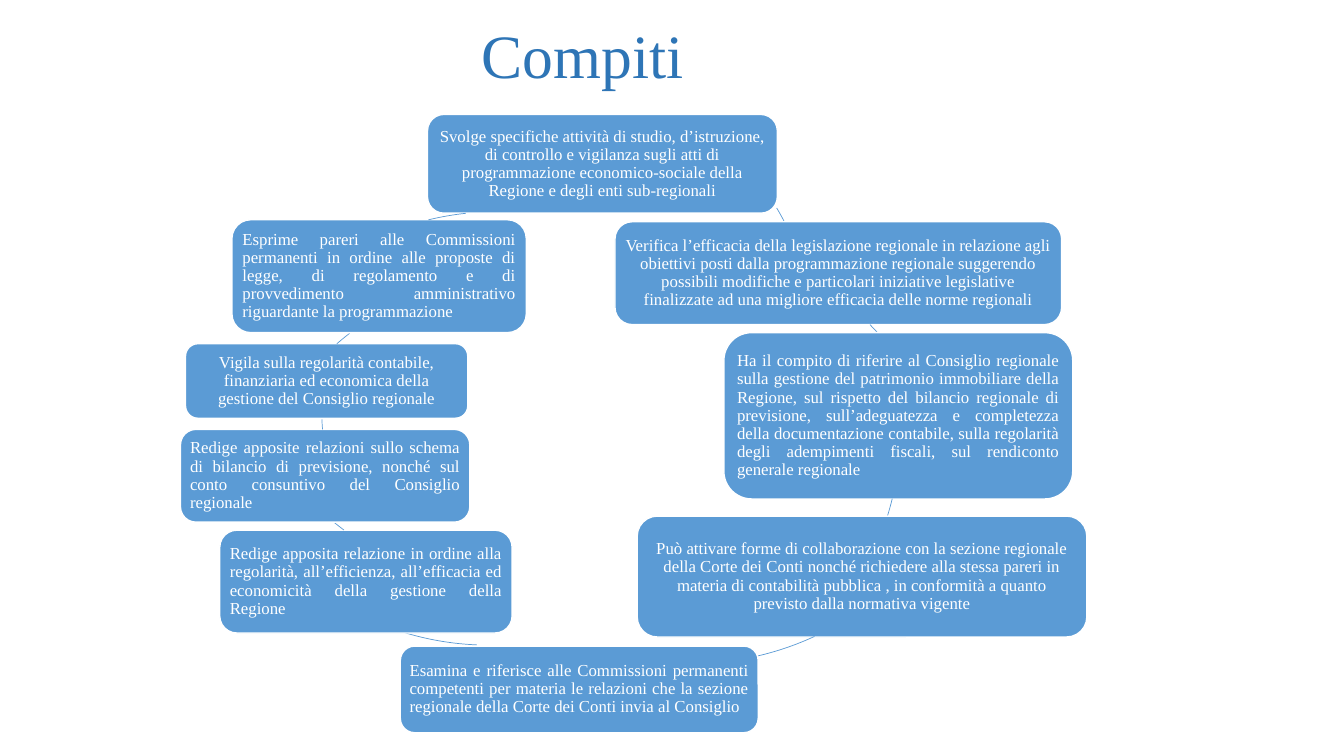
import math
from dataclasses import dataclass
from typing import Any

import pptx
import pptx.dml.color
import pptx.enum.shapes
import pptx.enum.text
import pptx.util

Inches = pptx.util.Inches
Pt = pptx.util.Pt
Color = pptx.dml.color.RGBColor
Align = pptx.enum.text.PP_ALIGN
Anchor = pptx.enum.text.MSO_ANCHOR
Fit = pptx.enum.text.MSO_AUTO_SIZE
Kind = pptx.enum.shapes.MSO_SHAPE


@dataclass(frozen=True)
class Theme:
    font: str = "Times New Roman"
    blue: Color = Color(0x5B, 0x9B, 0xD5)
    deep: Color = Color(0x2E, 0x75, 0xB6)
    white: Color = Color(0xFF, 0xFF, 0xFF)
    head: Pt = Pt(44)
    body: Pt = Pt(12)
    edge: Pt = Pt(1)
    thin: Pt = Pt(0.5)


@dataclass(frozen=True)
class Task:
    """A rounded box: left, top, width and height in inches."""
    place: tuple[float, float, float, float]
    text: str
    align: Align = Align.CENTER


@dataclass(frozen=True)
class Arc:
    """Part of a circle: its left and top, then two points, clockwise, in inches."""
    corner: tuple[float, float]
    start: tuple[float, float]
    end: tuple[float, float]


THEME = Theme()
SPAN = 5.71
PAD = Inches(0.05)

TASKS = [
    Task((4.24, 1.135, 3.47, 0.98),
         "Svolge specifiche attività di studio, d’istruzione, di controllo e vigilanza sugli atti di "
         "programmazione economico-sociale della Regione e degli enti sub-regionali"),
    Task((6.1, 2.2, 4.43, 1.02),
         "Verifica l’efficacia della legislazione regionale in relazione agli obiettivi posti dalla "
         "programmazione regionale suggerendo possibili modifiche e particolari iniziative legislative "
         "finalizzate ad una migliore efficacia delle norme regionali"),
    Task((7.18, 3.3, 3.46, 1.65),
         "Ha il compito di riferire al Consiglio regionale sulla gestione del patrimonio immobiliare "
         "della Regione, sul rispetto del bilancio regionale di previsione, sull’adeguatezza e "
         "completezza della documentazione contabile, sulla regolarità degli adempimenti fiscali, "
         "sul rendiconto generale regionale", Align.JUSTIFY),
    Task((6.32, 5.12, 4.46, 1.2),
         "Può attivare forme di collaborazione con la sezione regionale della Corte dei Conti nonché "
         "richiedere alla stessa pareri in materia di contabilità pubblica , in conformità a quanto "
         "previsto dalla normativa vigente"),
    Task((3.97, 6.41, 3.55, 0.86),
         "Esamina e riferisce alle Commissioni permanenti competenti per materia le relazioni che la "
         "sezione regionale della Corte dei Conti invia al Consiglio", Align.JUSTIFY),
    Task((2.18, 5.26, 2.9, 1.02),
         "Redige apposita relazione in ordine alla regolarità, all’efficienza, all’efficacia ed "
         "economicità della gestione della Regione", Align.JUSTIFY),
    Task((1.79, 4.26, 2.87, 0.92),
         "Redige apposite relazioni sullo schema di bilancio di previsione, nonché sul conto "
         "consuntivo del Consiglio regionale", Align.JUSTIFY),
    Task((1.84, 3.41, 2.8, 0.74),
         "Vigila sulla regolarità contabile, finanziaria ed economica della gestione del Consiglio "
         "regionale"),
    Task((2.3, 2.18, 2.92, 1.12),
         "Esprime pareri alle Commissioni permanenti in ordine alle proposte di legge, di regolamento "
         "e di provvedimento amministrativo riguardante la programmazione", Align.JUSTIFY),
]

ARCS = [
    Arc((2.39, 0.66), (7.71, 2.06), (7.79, 2.2)),
    Arc((3.74, 2.37), (8.63, 3.22), (8.7, 3.3)),
    Arc((3.22, 1.42), (8.86, 4.95), (8.81, 5.12)),
    Arc((4.02, 0.87), (8.08, 6.32), (7.52, 6.51)),
    Arc((1.99, 0.69), (4.73, 6.41), (3.99, 6.28)),
    Arc((2.27, 0.12), (3.41, 5.26), (3.32, 5.18)),
    Arc((3.19, 1.18), (3.2, 4.26), (3.2, 4.16)),
    Arc((2.36, 2.71), (3.34, 3.41), (3.47, 3.31)),
    Arc((2.07, 2.1), (4.25, 2.18), (4.62, 2.12)),
]


def apply(item: Any, form: dict[str, Any]) -> None:
    for name, value in form.items():
        setattr(item, name, value)


def write(shape: Any, text: str, frame: dict[str, Any], align: Align,
          size: Pt, color: Color) -> None:
    box = shape.text_frame
    box.text = text
    apply(box, {"word_wrap": True, "auto_size": Fit.NONE,
                "vertical_anchor": Anchor.MIDDLE, **frame})
    para = box.paragraphs[0]
    apply(para, {"alignment": align, "line_spacing": 0.9})
    font = para.runs[0].font
    apply(font, {"name": THEME.font, "size": size})
    font.color.rgb = color


def stroke(shape: Any, color: Color, width: Pt) -> None:
    shape.shadow.inherit = False
    shape.line.color.rgb = color
    shape.line.width = width


def draw_task(shapes: Any, task: Task) -> None:
    shape = shapes.add_shape(Kind.ROUNDED_RECTANGLE, *map(Inches, task.place))
    shape.fill.solid()
    shape.fill.fore_color.rgb = THEME.blue
    stroke(shape, THEME.white, THEME.edge)
    sides = ("left", "top", "right", "bottom")
    write(shape, task.text, {f"margin_{side}": PAD for side in sides},
          task.align, THEME.body, THEME.white)


def draw_arc(shapes: Any, arc: Arc) -> None:
    """Turn both points into angles, which the shape counts in 0.6 per degree."""
    left, top = arc.corner
    shape = shapes.add_shape(Kind.ARC, *map(Inches, (left, top, SPAN, SPAN)))
    for i, (x, y) in enumerate((arc.start, arc.end)):
        turn = math.degrees(math.atan2(y - top - SPAN / 2, x - left - SPAN / 2))
        shape.adjustments[i] = turn % 360 * 0.6
    shape.fill.background()
    stroke(shape, THEME.blue, THEME.thin)


def main() -> None:
    deck = pptx.Presentation()
    apply(deck, {"slide_width": Inches(13.33), "slide_height": Inches(7.5)})
    slide = deck.slides.add_slide(deck.slide_layouts[5])

    title = slide.shapes.title
    apply(title, {"left": Inches(0.7), "top": Inches(0.22),
                  "width": Inches(11.5), "height": Inches(1.45)})
    write(title, "Compiti", {"margin_left": Inches(4.08), "margin_bottom": Inches(0.78)},
          Align.LEFT, THEME.head, THEME.deep)

    cycle = slide.shapes.add_group_shape().shapes
    for task, arc in zip(TASKS, ARCS):
        draw_task(cycle, task)
        draw_arc(cycle, arc)
    deck.save("out.pptx")


if __name__ == "__main__":
    main()
